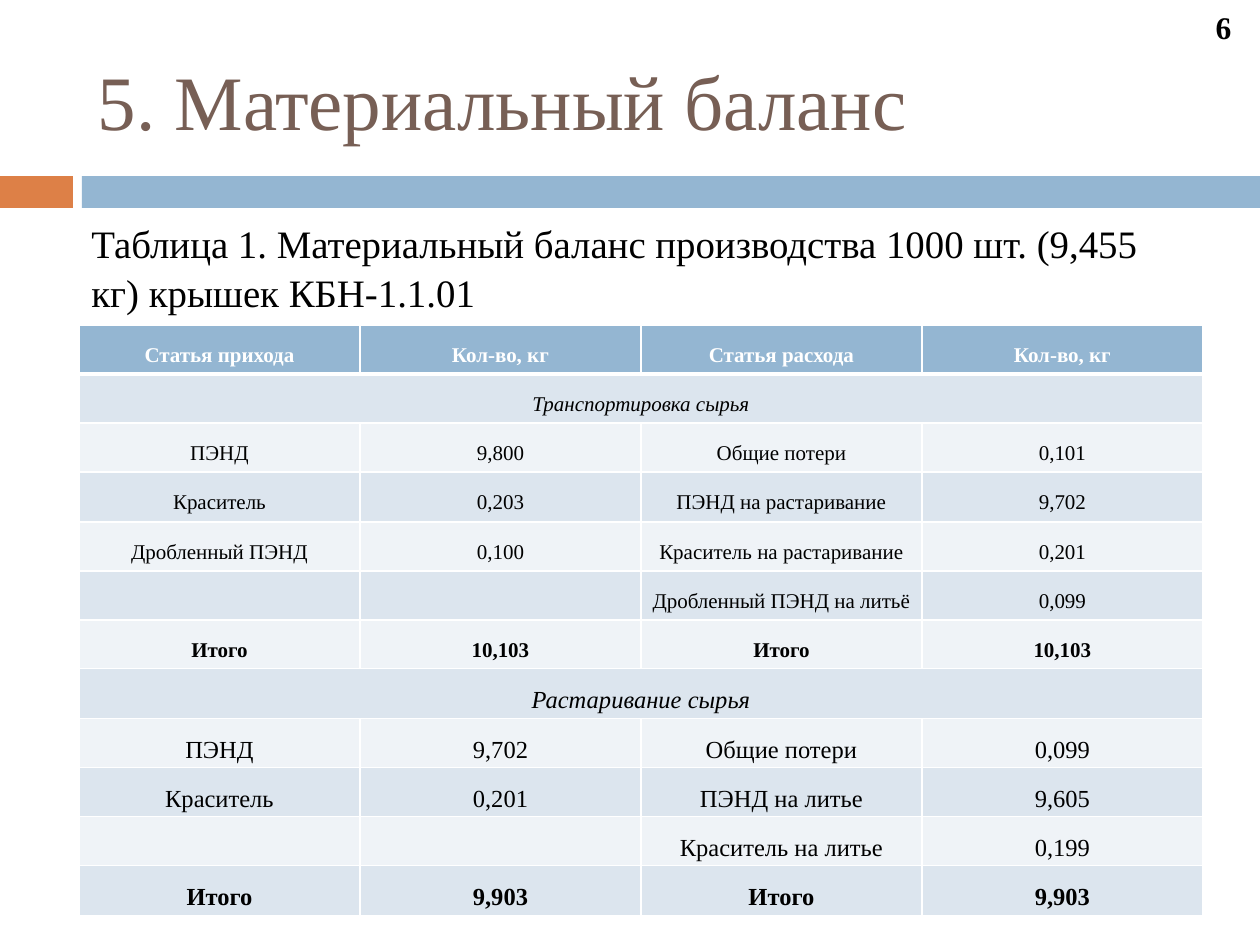
from lxml import etree
from pptx import Presentation
from pptx import util as u
from pptx.dml.color import RGBColor
from pptx.enum import shapes, text
from pptx.oxml.ns import qn

COLORS = {
    "accent": "DD8047", "header": "94B6D2", "title": "775F55",
    "band_dark": "DCE5EE", "band_light": "EFF3F7",
    "text": "000000", "white": "FFFFFF",
}
PX_PER_INCH = 126

HEADER = ("Статья прихода", "Кол-во, кг", "Статья расхода", "Кол-во, кг")
# Each section: name, font size, rows; the last row holds the totals.
SECTIONS = [
    ("Транспортировка сырья", 12, [
        ("ПЭНД", "9,800", "Общие потери", "0,101"),
        ("Краситель", "0,203", "ПЭНД на растаривание", "9,702"),
        ("Дробленный ПЭНД", "0,100", "Краситель на растаривание", "0,201"),
        ("", "", "Дробленный ПЭНД на литьё", "0,099"),
        ("Итого", "10,103", "Итого", "10,103"),
    ]),
    ("Растаривание сырья", 14, [
        ("ПЭНД", "9,702", "Общие потери", "0,099"),
        ("Краситель", "0,201", "ПЭНД на литье", "9,605"),
        ("", "", "Краситель на литье", "0,199"),
        ("Итого", "9,903", "Итого", "9,903"),
    ]),
]


def px(n):
    return u.Inches(n / PX_PER_INCH)


def rgb(name):
    return RGBColor.from_string(COLORS[name])


class SlideBuilder:
    font = "Times New Roman"

    def __init__(self, slide):
        self.s = slide

    def style(self, p, size, color="text", bold=False, italic=False,
              align=text.PP_ALIGN.LEFT, spacing=None):
        f = p.font
        f.name, f.size, f.bold, f.italic = self.font, u.Pt(size), bold, italic
        f.color.rgb = rgb(color)
        p.alignment = align
        if spacing:
            p.line_spacing = spacing

    def bar(self, x, y, w, h, color):
        sp = self.s.shapes.add_shape(shapes.MSO_SHAPE.RECTANGLE, px(x), px(y), px(w), px(h))
        sp.shadow.inherit = False
        sp.fill.solid()
        sp.fill.fore_color.rgb = rgb(color)
        sp.line.fill.background()

    def fill_text(self, sp, words, size, **style):
        tf = sp.text_frame
        tf.word_wrap = True
        tf.auto_size = text.MSO_AUTO_SIZE.NONE
        tf.vertical_anchor = text.MSO_ANCHOR.MIDDLE
        tf.text = words
        self.style(tf.paragraphs[0], size, **style)

    def title(self, x, y, w, h, words, size):
        sp = self.s.shapes.title
        sp.left, sp.top, sp.width, sp.height = px(x), px(y), px(w), px(h)
        self.fill_text(sp, words, size, color="title")

    def label(self, x, y, w, h, words, size, **style):
        sp = self.s.shapes.add_textbox(px(x), px(y), px(w), px(h))
        self.fill_text(sp, words, size, **style)

    def borders(self, cell, top=1, bottom=1):
        tc_pr = cell._tc.get_or_add_tcPr()
        for side, width in (("L", 1), ("R", 1), ("T", top), ("B", bottom)):
            ln = etree.SubElement(tc_pr, qn(f"a:ln{side}"), w=str(u.Pt(width)))
            fill = etree.SubElement(ln, qn("a:solidFill"))
            etree.SubElement(fill, qn("a:srgbClr"), val=COLORS["white"])

    def row(self, table, i, values, size, **style):
        """Fill row i; a single value spans the whole row."""
        cells = list(table.rows[i].cells)
        if len(values) == 1:
            cells[0].merge(cells[-1])
        color = "header" if i == 0 else ("band_light", "band_dark")[i % 2]
        for cell in cells:
            cell.margin_left = cell.margin_right = px(9)
            cell.margin_top = cell.margin_bottom = 0
            cell.vertical_anchor = text.MSO_ANCHOR.MIDDLE
            self.borders(cell, top=3 if i == 1 else 1, bottom=3 if i == 0 else 1)
            cell.fill.solid()
            cell.fill.fore_color.rgb = rgb(color)
        for cell, value in zip(cells, values):
            if value:
                cell.text = value
                self.style(cell.text_frame.paragraphs[0], size, spacing=1.5,
                           align=text.PP_ALIGN.CENTER, **style)

    def balance_table(self, x, y, w, h, header, sections):
        count = 1 + sum(1 + len(rows) for _, _, rows in sections)
        table = self.s.shapes.add_table(count, len(header), px(x), px(y), px(w), px(h)).table
        for col in table.columns:
            col.width = px(w // len(header))
        for i, r in enumerate(table.rows):
            r.height = px(h * (i + 1) // count - h * i // count)
        self.row(table, 0, header, 12, color="white", bold=True)
        i = 1
        for name, size, rows in sections:
            self.row(table, i, (name,), size, italic=True)
            for i, values in enumerate(rows, i + 1):
                self.row(table, i, values, size, bold=values[0] == "Итого")
            i += 1


def main():
    prs = Presentation()
    prs.slide_width, prs.slide_height = px(1260), px(945)
    b = SlideBuilder(prs.slides.add_slide(prs.slide_layouts[5]))
    b.bar(0, 176, 73, 32, "accent")
    b.bar(82, 176, 1178, 32, "header")
    b.title(85, 32, 1124, 136, "5. Материальный баланс", 44)
    b.balance_table(79, 325, 1124, 591, HEADER, SECTIONS)
    b.label(79, 217, 1123, 98,
            "Таблица 1. Материальный баланс производства 1000 шт. (9,455 кг) крышек КБН-1.1.01",
            22.2, spacing=1.05)
    b.label(1187, 0, 73, 53, "6", 18, bold=True, align=text.PP_ALIGN.CENTER)
    prs.save("out.pptx")


if __name__ == "__main__":
    main()
